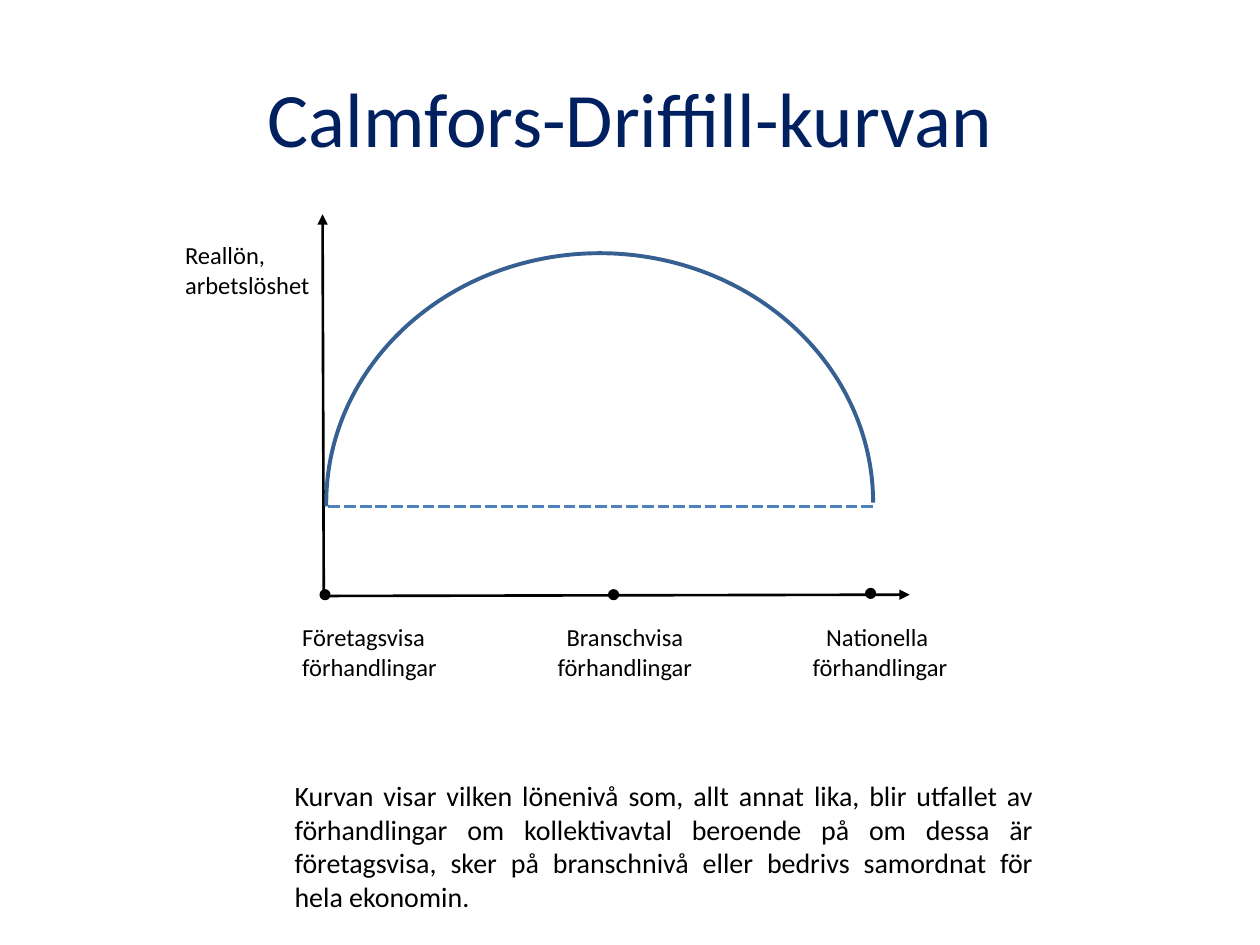
from lxml import etree
from pptx import Presentation
from pptx.dml.color import RGBColor
from pptx.enum.dml import MSO_LINE
from pptx.enum.shapes import MSO_CONNECTOR, MSO_SHAPE
from pptx.enum.text import MSO_ANCHOR, MSO_AUTO_SIZE, PP_ALIGN
from pptx.oxml.ns import qn
from pptx.util import Inches, Pt

BLACK = RGBColor(0x00, 0x00, 0x00)
NAVY = RGBColor(0x00, 0x20, 0x60)
BLUE = RGBColor(0x4F, 0x81, 0xBD)
DARK_BLUE = RGBColor(0x37, 0x60, 0x92)
LEFT, CENTER, JUSTIFY = PP_ALIGN.LEFT, PP_ALIGN.CENTER, PP_ALIGN.JUSTIFY
MIDDLE = MSO_ANCHOR.MIDDLE
FIT_SHAPE = MSO_AUTO_SIZE.SHAPE_TO_FIT_TEXT
STRAIGHT = MSO_CONNECTOR.STRAIGHT
ARC, OVAL = MSO_SHAPE.ARC, MSO_SHAPE.OVAL
SYS_DASH = MSO_LINE.SQUARE_DOT
TITLE_ONLY = 5
DOT = 0.06

LABELS = [
    ((2.3, 4.89, 1.48, 0.57), ["Företagsvisa förhandlingar"], LEFT, True),
    ((4.29, 4.89, 1.34, 0.57), ["Branschvisa förhandlingar"], CENTER, True),
    ((6.32, 4.89, 1.33, 0.57), ["Nationella ", "förhandlingar"], CENTER, True),
    ((1.37, 1.86, 1.19, 0.57), ["Reallön,", "arbetslöshet"], LEFT, False),
]
NOTE = (
    "Kurvan visar vilken lönenivå som, allt annat lika, blir utfallet av "
    "förhandlingar om kollektivavtal beroende på om dessa är företagsvisa, "
    "sker på branschnivå eller bedrivs samordnat för hela ekonomin."
)
DOTS = [(2.55, 4.69), (4.84, 4.69), (6.88, 4.68)]


def write(p, text, size, color, align):
    p.alignment = align
    r = p.add_run()
    r.text = text
    for name, value in {"name": "Calibri", "size": Pt(size)}.items():
        setattr(r.font, name, value)
    r.font.color.rgb = color


def add_title(s, text):
    sp = s.shapes.title
    box = {"left": 0.5, "top": 0.3, "width": 9, "height": 1.25}
    for name, value in box.items():
        setattr(sp, name, Inches(value))
    tf = sp.text_frame
    tf.vertical_anchor = MIDDLE
    write(tf.paragraphs[0], text, 44, NAVY, CENTER)


def add_text(s, box, lines, size, align, wrap=True):
    tf = s.shapes.add_textbox(*map(Inches, box)).text_frame
    for name, value in {"word_wrap": wrap, "auto_size": FIT_SHAPE}.items():
        setattr(tf, name, value)
    for i, line in enumerate(lines):
        p = tf.add_paragraph() if i else tf.paragraphs[0]
        write(p, line, size, BLACK, align)


def add_line(s, start, end, color, width, dash=None, arrow=False):
    line = s.shapes.add_connector(STRAIGHT, *map(Inches, start + end))
    line.line.color.rgb = color
    line.line.width = Pt(width)
    if dash:
        line.line.dash_style = dash
    sp_pr = line._element.spPr
    if arrow:
        ln = sp_pr.find(qn("a:ln"))
        etree.SubElement(ln, qn("a:tailEnd"), type="triangle")
    etree.SubElement(sp_pr, qn("a:effectLst"))


def add_outline(s, kind, box, color, width):
    sp = s.shapes.add_shape(kind, *map(Inches, box))
    sp.shadow.inherit = False
    sp.line.color.rgb = color
    sp.line.width = Pt(width)
    return sp


def add_curve(s):
    sp = add_outline(s, ARC, (2.59, 2.01, 4.34, 3.96), DARK_BLUE, 2.25)
    sp.fill.background()
    sp.adjustments[0] = 107.53
    sp.adjustments[1] = 0


def add_dot(s, left, top):
    sp = add_outline(s, OVAL, (left, top, DOT, DOT), BLACK, 2)
    sp.fill.solid()
    sp.fill.fore_color.rgb = BLACK


def main():
    prs = Presentation()
    prs.slide_width, prs.slide_height = Inches(10), Inches(7.5)
    s = prs.slides.add_slide(prs.slide_layouts[TITLE_ONLY])
    add_title(s, "Calmfors-Driffill-kurvan")
    add_text(s, (2.24, 6.13, 6.06, 1.17), [NOTE], 16, JUSTIFY)
    add_line(s, (2.57, 4.75), (2.56, 1.7), BLACK, 1.5, arrow=True)
    add_line(s, (2.57, 4.73), (7.22, 4.72), BLACK, 1.5, arrow=True)
    add_line(s, (6.93, 4.02), (2.59, 4.02), BLUE, 2.25, dash=SYS_DASH)
    add_curve(s)
    for left, top in DOTS:
        add_dot(s, left, top)
    for box, lines, align, wrap in LABELS:
        add_text(s, box, lines, 14, align, wrap)
    prs.save("out.pptx")


if __name__ == "__main__":
    main()
